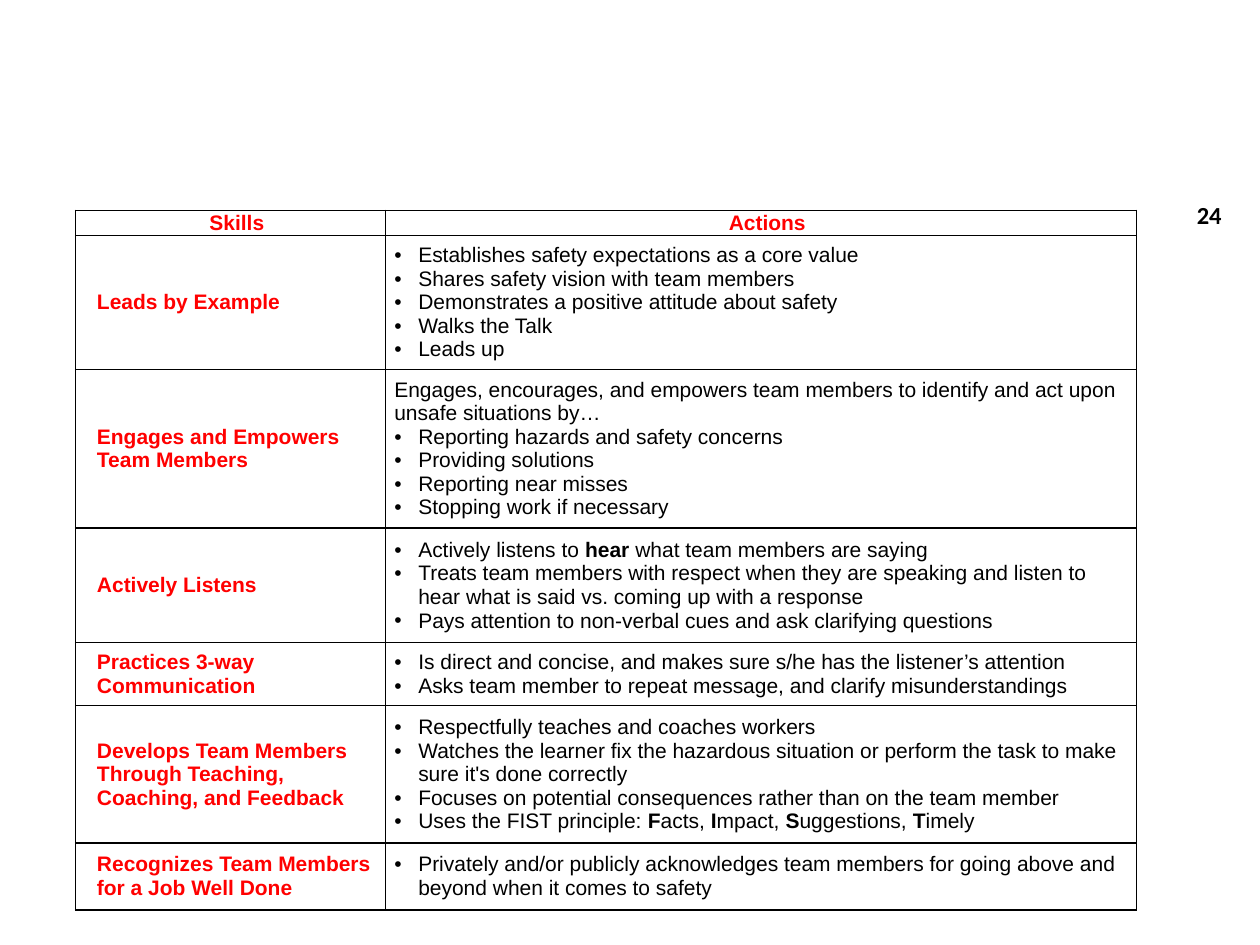
from lxml.etree import SubElement as Sub
from pptx import Presentation
from pptx.dml.color import RGBColor
from pptx.enum.text import MSO_ANCHOR as Anchor, PP_ALIGN as Align
from pptx.oxml.ns import qn
from pptx.util import Inches, Pt

RED = RGBColor(0xFF, 0, 0)
BLACK = RGBColor(0, 0, 0)

# Grid of the table, in inches
COLS = [2.46, 5.96]
ROWS = [0.2, 1.06, 1.26, 0.91, 0.5, 1.09, 0.53]
LEFT, TOP = 0.6, 1.67

# Skill and its actions: "• " starts a bullet, ** switches bold
SKILLS = [
    ("Leads by Example", [
        "• Establishes safety expectations as a core value",
        "• Shares safety vision with team members",
        "• Demonstrates a positive attitude about safety",
        "• Walks the Talk",
        "• Leads up"]),
    ("Engages and Empowers Team Members", [
        "Engages, encourages, and empowers team members to identify "
        "and act upon unsafe situations by…",
        "• Reporting hazards and safety concerns",
        "• Providing solutions",
        "• Reporting near misses",
        "• Stopping work if necessary"]),
    ("Actively Listens", [
        "• Actively listens to **hear **what team members are saying",
        "• Treats team members with respect when they are speaking and "
        "listen to hear what is said vs. coming up with a response",
        "• Pays attention to non-verbal cues and ask clarifying questions"]),
    ("Practices 3-way Communication", [
        "• Is direct and concise, and makes sure s/he has the listener’s attention",
        "• Asks team member to repeat message, and clarify misunderstandings"]),
    ("Develops Team Members Through Teaching, Coaching, and Feedback", [
        "• Respectfully teaches and coaches workers",
        "• Watches the learner fix the hazardous situation or perform "
        "the task to make sure it's done correctly",
        "• Focuses on potential consequences rather than on the team member",
        "• Uses the FIST principle: **F**acts, **I**mpact, "
        "**S**uggestions, **T**imely"]),
    ("Recognizes Team Members for a Job Well Done", [
        "• Privately and/or publicly acknowledges team members for going "
        "above and beyond when it comes to safety"]),
]


def add_run(para, text, size, face, color, bold):
    run = para.add_run()
    run.text = text
    font = run.font
    font.size, font.name, font.bold = Pt(size), face, bold
    font.color.rgb = color


def style(cell, pad):
    cell.vertical_anchor = Anchor.MIDDLE
    cell.margin_left = cell.margin_right = Inches(0.07)
    cell.margin_top = cell.margin_bottom = Inches(pad)
    props = cell._tc.get_or_add_tcPr()
    for side in ("a:lnL", "a:lnR", "a:lnT", "a:lnB"):
        line = Sub(props, qn(side), w=str(Pt(1)))
        fill = Sub(line, qn("a:solidFill"))
        Sub(fill, qn("a:srgbClr"), val=str(BLACK))
    cell.fill.background()


deck = Presentation()
deck.slide_width, deck.slide_height = Inches(10), Inches(7.5)
slide = deck.slides.add_slide(deck.slide_layouts[6])

# Page number
box = slide.shapes.add_textbox(Inches(9.4), Inches(1.54), Inches(0.5), Inches(0.34))
box.text_frame.word_wrap = True
add_run(box.text_frame.paragraphs[0], "24", 14, "Calibri", BLACK, True)

# Table frame
table = slide.shapes.add_table(
    len(ROWS), len(COLS), Inches(LEFT), Inches(TOP),
    Inches(sum(COLS)), Inches(sum(ROWS))).table
table.first_row = table.horz_banding = False
for col, width in zip(table.columns, COLS):
    col.width = Inches(width)
for row, height in zip(table.rows, ROWS):
    row.height = Inches(height)

# Red labels: the header row and the skill column
labels = [(0, 0, "Skills"), (0, 1, "Actions")]
labels += [(r, 0, skill) for r, (skill, _) in enumerate(SKILLS, 1)]
for r, c, text in labels:
    cell = table.cell(r, c)
    style(cell, 0)
    para = cell.text_frame.paragraphs[0]
    para.alignment = Align.LEFT if r else Align.CENTER
    para._p.get_or_add_pPr().set("marL", str(Inches(0.1)))
    add_run(para, text, 12, "Arial", RED, True)

# Actions
for r, (_, lines) in enumerate(SKILLS, 1):
    cell = table.cell(r, 1)
    style(cell, 0.03)
    frame = cell.text_frame
    for i, text in enumerate(lines):
        para = frame.add_paragraph() if i else frame.paragraphs[0]
        if text.startswith("• "):
            props = para._p.get_or_add_pPr()
            props.set("marL", str(Inches(0.19)))
            props.set("indent", str(-Inches(0.19)))
            Sub(props, qn("a:buFont"), typeface="Arial")
            Sub(props, qn("a:buChar"), char="•")
        for k, part in enumerate(text.removeprefix("• ").split("**")):
            add_run(para, part, 12, "Arial", BLACK, k % 2 == 1)

deck.save("out.pptx")
